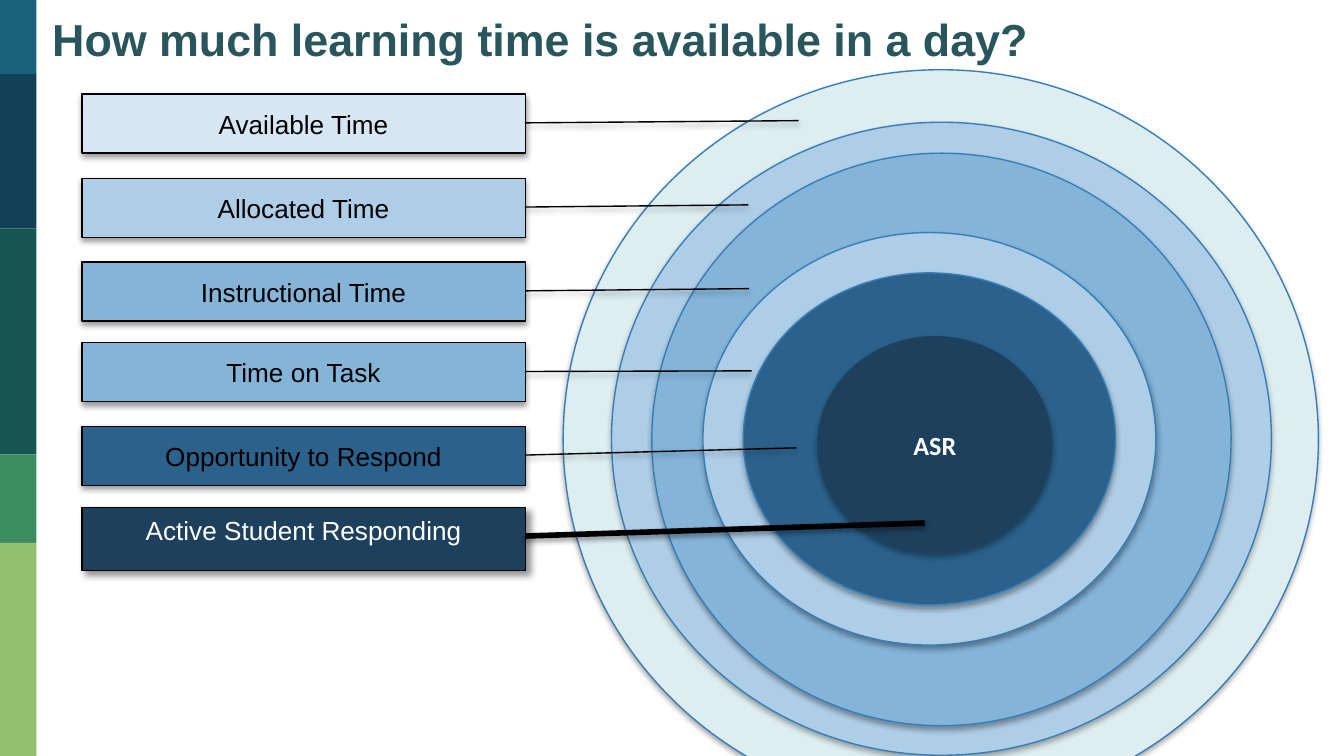
from pptx import Presentation
from pptx.dml.color import RGBColor as RGB
from pptx.enum.shapes import MSO_CONNECTOR, MSO_SHAPE
from pptx.enum.text import MSO_ANCHOR as ANCHOR, PP_ALIGN as ALIGN
from pptx.oxml import parse_xml
from pptx.util import Pt

NS = "http://schemas.openxmlformats.org/drawingml/2006/main"
COLORS = {
    "teal": "18637B", "navy": "124057", "pine": "165751", "green": "3B8D61", "lime": "94BF6E",
    "mist": "DDEDF0", "ice": "D6E6F2", "pale": "AECDE6", "sky": "85B4D9", "blue": "2B618B",
    "deep": "1D405D", "outline": "367EB9", "title": "29555D", "black": "000000", "white": "FFFFFF",
}
C = {name: RGB.from_string(value) for name, value in COLORS.items()}


def write(sp, text, size=14, font="Arial", color="black", bold=False,
          align=ALIGN.CENTER, anchor=ANCHOR.MIDDLE, wrap=True):
    tf = sp.text_frame
    tf.word_wrap = wrap
    tf.vertical_anchor = anchor
    p = tf.paragraphs[0]
    p.alignment = align
    r = p.add_run()
    r.text = text
    r.font.size = Pt(size)
    r.font.name = font
    r.font.bold = bold
    r.font.color.rgb = C[color]


def style(sp, fill=None, line=None, width=0.75, shadow=None):
    if fill:
        sp.fill.solid()
        sp.fill.fore_color.rgb = C[fill]
    if line:
        sp.line.color.rgb = C[line]
        sp.line.width = Pt(width)
    else:
        sp.line.fill.background()
    effect = ""
    if shadow:
        alpha, blur, dist, angle = shadow
        effect = (f'<a:outerShdw blurRad="{Pt(blur)}" dist="{Pt(dist)}" dir="{angle * 60000}" '
                  f'algn="ctr" rotWithShape="0"><a:srgbClr val="{COLORS["black"]}">'
                  f'<a:alpha val="{alpha * 1000}"/></a:srgbClr></a:outerShdw>')
    sp._element.spPr.append(parse_xml(f'<a:effectLst xmlns:a="{NS}">{effect}</a:effectLst>'))


prs = Presentation()
prs.slide_width, prs.slide_height = Pt(720), Pt(405)
s = prs.slides.add_slide(prs.slide_layouts[6])
shapes = s.shapes

RING_SHADOW = (35, 3.1, 1.8, 90)
LABEL_SHADOW = (38, 3.1, 1.6, 90)
LABEL_LEFT, LABEL_WIDTH, LABEL_HEIGHT = 43.9, 237.6, 31.7

edges = [0, 39.6, 122.4, 243.4, 290.9, 405]
for top, bottom, color in zip(edges, edges[1:], ["teal", "navy", "pine", "green", "lime"]):
    sp = shapes.add_shape(MSO_SHAPE.RECTANGLE, 0, Pt(top), Pt(19.5), Pt(bottom - top))
    style(sp, color)

levels = [
    ("Available Time", 50.4, "ice", (0.45, -0.616), (301.7, 37.4, 404.6, 396), 0.121, "mist"),
    ("Allocated Time", 95.5, "pale", (0.451, -0.503), (327.6, 65.5, 353.5, 339.1), 0.075, "pale"),
    ("Instructional Time", 140.4, "sky", (0.45, -0.504), (349.2, 82.1, 310.3, 306.7), 0.183, "sky"),
    ("Time on Task", 183.6, "sky", (0.477, -0.51), (376.6, 124.6, 242.6, 221), 0.143, "pale"),
    ("Opportunity to Respond", 228.4, "blue", (0.365, -0.611), (398.2, 146.2, 199.4, 177.8), 0.241, "blue"),
]
for text, top, label_fill, tip, ring_box, thickness, ring_fill in levels:
    ring = shapes.add_shape(MSO_SHAPE.DONUT, *map(Pt, ring_box))
    ring.adjustments[0] = thickness
    style(ring, ring_fill, "outline", shadow=RING_SHADOW)

    label = shapes.add_shape(MSO_SHAPE.LINE_CALLOUT_1, Pt(LABEL_LEFT), Pt(top),
                             Pt(LABEL_WIDTH), Pt(LABEL_HEIGHT))
    label._element.spPr.xfrm.set("flipH", "1")
    for i, value in enumerate((0.488, 0.001, *tip)):
        label.adjustments[i] = value
    style(label, label_fill, "black", shadow=LABEL_SHADOW)
    write(label, text)

title = shapes.add_textbox(Pt(20.9), Pt(2.9), Pt(542.2), Pt(36))
write(title, "How much learning time is available in a day?", size=24, color="title",
      bold=True, align=ALIGN.LEFT, anchor=ANCHOR.TOP, wrap=False)

core = shapes.add_shape(MSO_SHAPE.OVAL, Pt(437.8), Pt(180), Pt(126), Pt(116.6))
style(core, "deep", shadow=RING_SHADOW)
write(core, "ASR", font="Calibri", color="white", bold=True)

label = shapes.add_shape(MSO_SHAPE.RECTANGLE, Pt(LABEL_LEFT), Pt(272), Pt(LABEL_WIDTH), Pt(33.8))
style(label, "deep", "black", shadow=(43, 4, 3, 45))
write(label, "Active Student Responding", color="white", anchor=ANCHOR.TOP)

pointer = shapes.add_connector(MSO_CONNECTOR.STRAIGHT, Pt(LABEL_LEFT + LABEL_WIDTH), Pt(287.2),
                               Pt(495.4), Pt(280.2))
style(pointer, line="black", width=3, shadow=LABEL_SHADOW)

prs.save("out.pptx")
